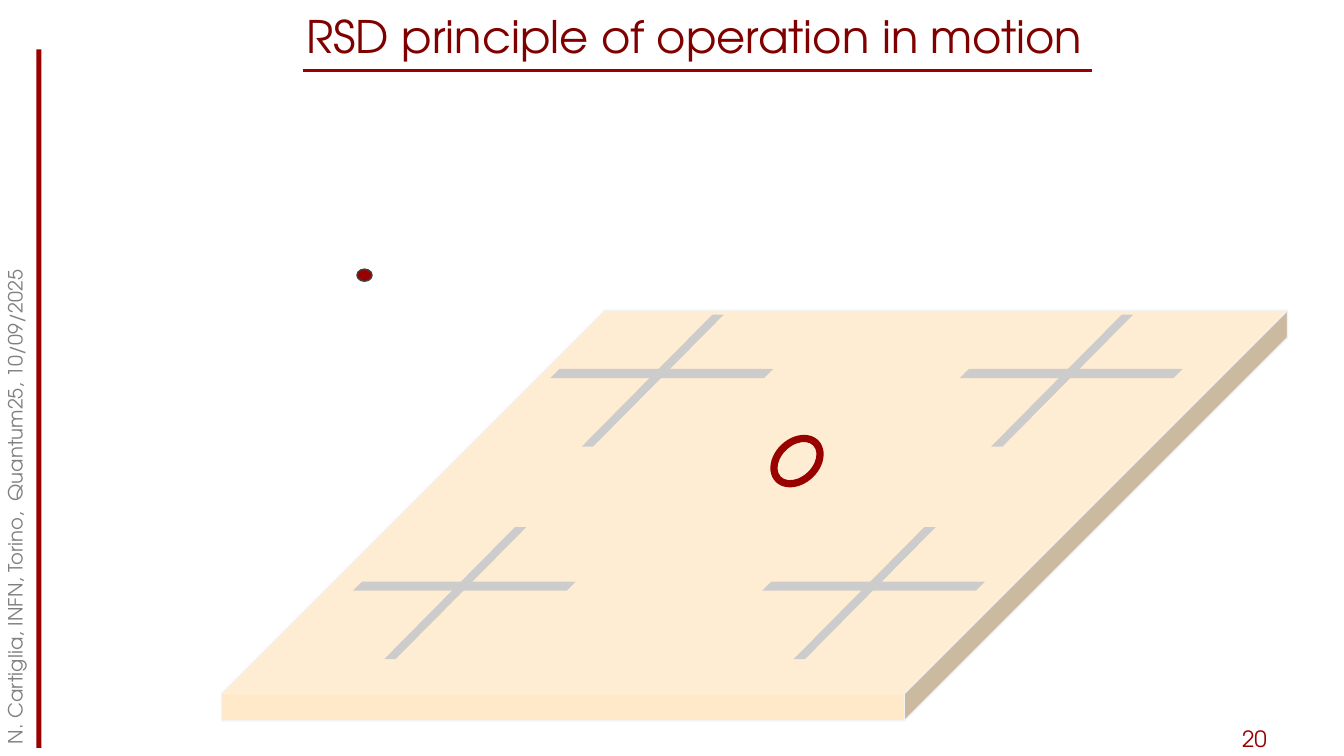
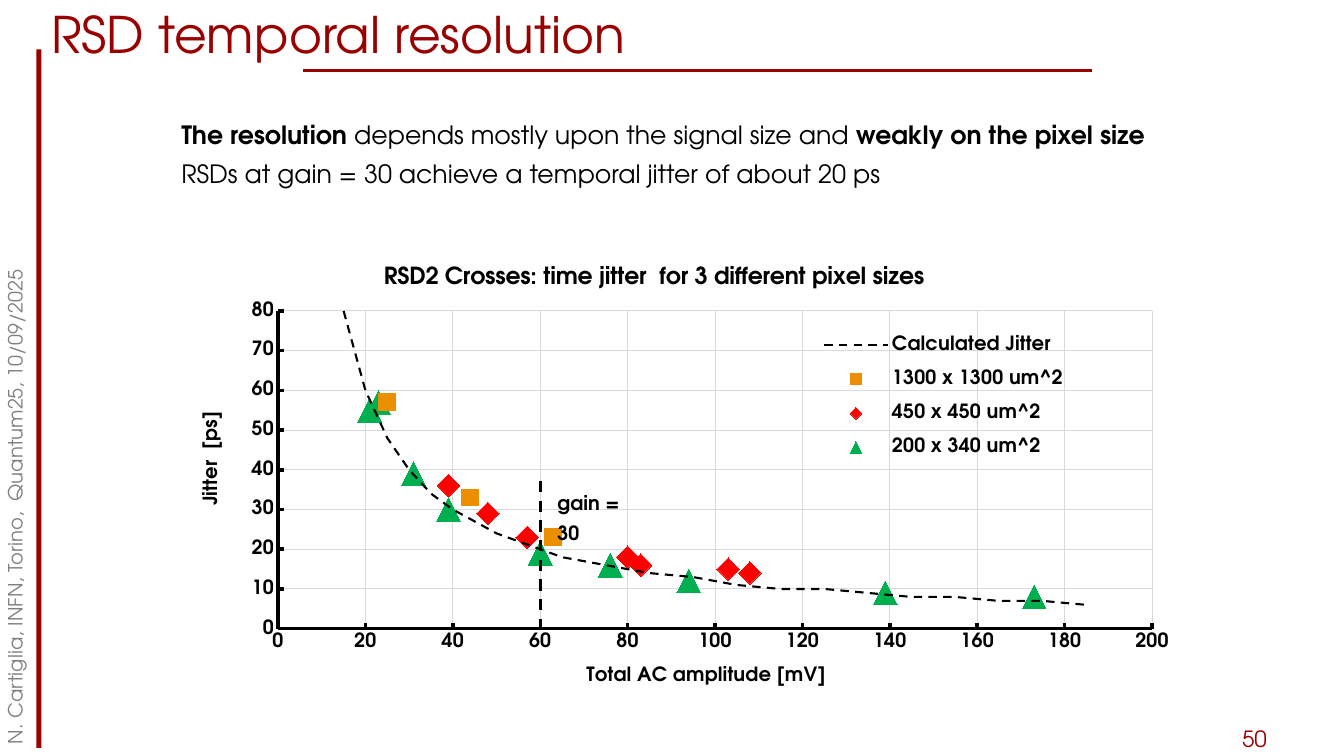
from pptx import Presentation
from pptx.chart.data import XyChartData
from pptx.dml.color import RGBColor
from pptx.enum.chart import XL_CHART_TYPE, XL_LEGEND_POSITION, XL_MARKER_STYLE, XL_TICK_MARK
from pptx.enum.dml import MSO_LINE
from pptx.enum.shapes import MSO_CONNECTOR, MSO_SHAPE
from pptx.enum.text import MSO_ANCHOR, PP_ALIGN
from pptx.oxml import parse_xml
from pptx.oxml.ns import nsdecls
from pptx.util import Pt

EMU_PER_PX = 9144  # 100 px to the inch
FONT = "TeX Gyre Adventor"

RED = RGBColor(0x99, 0x00, 0x00)
DARK_RED = RGBColor(0x80, 0x00, 0x00)
BLACK = RGBColor(0x00, 0x00, 0x00)
GRAY = RGBColor(0x80, 0x80, 0x80)
OUTLINE_GRAY = RGBColor(0x40, 0x40, 0x40)
GRID_GRAY = RGBColor(0xD9, 0xD9, 0xD9)
PAD_GRAY = RGBColor(0xCC, 0xCC, 0xCC)
SENSOR_EDGE = RGBColor(0xF2, 0xF2, 0xF2)
SENSOR_CREAM = RGBColor(0xFF, 0xE9, 0xC8)
ORANGE = RGBColor(0xEB, 0x8F, 0x00)
BRIGHT_RED = RGBColor(0xFF, 0x00, 0x00)
GREEN = RGBColor(0x00, 0xB0, 0x50)

RECTANGLE = MSO_SHAPE.RECTANGLE
OVAL = MSO_SHAPE.OVAL
DONUT = MSO_SHAPE.DONUT
CUBE = MSO_SHAPE.CUBE
PARALLELOGRAM = MSO_SHAPE.PARALLELOGRAM
STRAIGHT = MSO_CONNECTOR.STRAIGHT
DASH = MSO_LINE.DASH
TOP = MSO_ANCHOR.TOP
MIDDLE = MSO_ANCHOR.MIDDLE
LEFT = PP_ALIGN.LEFT
CENTER = PP_ALIGN.CENTER
TICK_INSIDE = XL_TICK_MARK.INSIDE
LEGEND_RIGHT = XL_LEGEND_POSITION.RIGHT
SCATTER = XL_CHART_TYPE.XY_SCATTER_SMOOTH_NO_MARKERS
SQUARE = XL_MARKER_STYLE.SQUARE
DIAMOND = XL_MARKER_STYLE.DIAMOND
TRIANGLE = XL_MARKER_STYLE.TRIANGLE

FOOTER = "N. Cartiglia, INFN, Torino,  Quantum25, 10/09/2025"
SENSOR_HEIGHT = 407
SENSOR_DEPTH = 380
CURVE_NAME = "Calculated Jitter"
CURVE_AMPLITUDES = [*range(5, 66, 5), *range(75, 186, 10)]
JITTER_TIMES_AMPLITUDE = 1200

# name, marker style, marker size, colour, (amplitude, jitter) points
PIXEL_SERIES = [
    ("1300 x 1300 um^2", SQUARE, 12, ORANGE, [(25, 57), (44, 33), (63, 23)]),
    ("450 x 450 um^2", DIAMOND, 16, BRIGHT_RED,
     [(39, 36), (48, 29), (57, 23), (80, 18), (83, 16), (103, 15), (108, 14)]),
    ("200 x 340 um^2", TRIANGLE, 17, GREEN,
     [(21, 55), (23, 57), (31, 39), (39, 30), (60, 19), (76, 16), (94, 12),
      (139, 9), (173, 8)]),
]


def px(*lengths):
    return [length * EMU_PER_PX for length in lengths]


def style_font(font, size, color, bold=False):
    font.name = FONT
    font.size = Pt(size)
    font.bold = bold
    font.color.rgb = color


def add_shape(slide, kind, box, fill, outline=None, adjustment=None, rotation=0):
    shape = slide.shapes.add_shape(kind, *px(*box))
    shape.shadow.inherit = False
    shape.fill.solid()
    shape.fill.fore_color.rgb = fill
    if outline is None:
        shape.line.fill.background()
    else:
        shape.line.color.rgb = outline
        shape.line.width = Pt(1)
    if adjustment is not None:
        shape.adjustments[0] = adjustment
    shape.rotation = rotation


def add_line(slide, start, end, color, dash=None):
    connector = slide.shapes.add_connector(STRAIGHT, *px(*start, *end))
    connector.line.color.rgb = color
    connector.line.width = Pt(2)
    if dash is not None:
        connector.line.dash_style = dash
    properties = connector.element.spPr
    properties.append(parse_xml(f"<a:effectLst {nsdecls('a')}/>"))


def add_text(slide, box, paragraphs, size, color, anchor=TOP, align=LEFT,
             line_spacing=1.0, rotation=0):
    """Add a text box; each paragraph is a list of (text, bold) runs."""
    text_box = slide.shapes.add_textbox(*px(*box))
    text_box.rotation = rotation
    text_frame = text_box.text_frame
    text_frame.word_wrap = True
    text_frame.vertical_anchor = anchor
    for index, runs in enumerate(paragraphs):
        paragraph = text_frame.add_paragraph() if index else text_frame.paragraphs[0]
        paragraph.alignment = align
        paragraph.line_spacing = line_spacing
        for text, bold in runs:
            run = paragraph.add_run()
            run.text = text
            style_font(run.font, size, color, bold)


def add_base_slide(presentation, title, number, title_corner, title_size, title_color,
                   title_align):
    slide = presentation.slides.add_slide(presentation.slide_layouts[6])
    add_shape(slide, RECTANGLE, (36, 49, 5, 693), RED)
    add_line(slide, (301, 70), (1083, 70), RED)
    add_text(slide, (1222, 715, 81, 35), [[(str(number), False)]], 16, RED, MIDDLE)
    add_text(slide, (-339, 373, 712, 38), [[(FOOTER, False)]], 14, GRAY, rotation=270)
    add_text(slide, (*title_corner, 1292, 70), [[(title, False)]], title_size,
             title_color, MIDDLE, title_align)
    return slide


def add_cross_pad(slide, left, top):
    add_shape(slide, PARALLELOGRAM, (left, top, 141, 131), PAD_GRAY, adjustment=0.99)
    add_shape(slide, PARALLELOGRAM, (left - 31, top + 54, 221, 9), PAD_GRAY, adjustment=1)


def set_layout(element, left, top, width=None, height=None, inner=False):
    """Place a chart part by fractions of the chart area."""
    for layout in element.xpath("./c:layout"):
        element.remove(layout)
    target = '<c:layoutTarget val="inner"/>' if inner else ""
    modes = '<c:xMode val="edge"/><c:yMode val="edge"/>'
    sizes = zip("xywh", (left, top, width, height))
    values = "".join(f'<c:{key} val="{value}"/>' for key, value in sizes
                     if value is not None)
    layout = parse_xml(f"<c:layout {nsdecls('c')}><c:manualLayout>"
                       f"{target}{modes}{values}</c:manualLayout></c:layout>")
    overlays = element.xpath("./c:overlay")
    if overlays:
        overlays[0].addprevious(layout)
    else:
        element.insert(0, layout)


def set_chart_title(title, text, size, left, top):
    title.text_frame.text = text
    style_font(title.text_frame.paragraphs[0].runs[0].font, size, BLACK, True)
    set_layout(title.element, left, top)


def style_axis(axis, maximum, step):
    axis.minimum_scale = 0
    axis.maximum_scale = maximum
    axis.major_unit = step
    axis.major_tick_mark = TICK_INSIDE
    axis.has_major_gridlines = True
    axis.major_gridlines.format.line.color.rgb = GRID_GRAY
    axis.major_gridlines.format.line.width = Pt(0.75)
    axis.format.line.color.rgb = BLACK
    axis.format.line.width = Pt(2.5)
    axis.tick_labels.number_format = "0"
    axis.tick_labels.number_format_is_linked = False
    style_font(axis.tick_labels.font, 14, BLACK, True)


def jitter_data():
    chart_data = XyChartData()
    curve = chart_data.add_series(CURVE_NAME)
    for amplitude in CURVE_AMPLITUDES:
        curve.add_data_point(amplitude, round(JITTER_TIMES_AMPLITUDE / amplitude))
    for name, _, _, _, points in PIXEL_SERIES:
        series = chart_data.add_series(name)
        for amplitude, jitter in points:
            series.add_data_point(amplitude, jitter)
    return chart_data


def style_series(plot):
    plot.vary_by_categories = False
    curve, *pixel_series = plot.series
    curve.smooth = True
    curve.format.line.color.rgb = BLACK
    curve.format.line.width = Pt(1.5)
    curve.format.line.dash_style = DASH
    for series, (_, style, size, color, _) in zip(pixel_series, PIXEL_SERIES):
        series.smooth = False
        series.format.line.fill.background()
        series.marker.style = style
        series.marker.size = size
        series.marker.format.fill.solid()
        series.marker.format.fill.fore_color.rgb = color
        series.marker.format.line.fill.background()


def add_jitter_chart(slide):
    chart = slide.shapes.add_chart(SCATTER, *px(175, 240, 1008, 457), jitter_data()).chart
    style_font(chart.font, 14, BLACK, True)
    style_series(chart.plots[0])
    style_axis(chart.category_axis, 200, 20)
    style_axis(chart.value_axis, 80, 10)
    set_layout(chart.element.xpath(".//c:plotArea")[0], 0.1, 0.15, 0.86, 0.69, inner=True)

    chart.has_title = True
    set_chart_title(chart.chart_title,
                    "RSD2 Crosses: time jitter  for 3 different pixel sizes", 16.8, 0.2, 0.04)
    set_chart_title(chart.category_axis.axis_title, "Total AC amplitude [mV]", 14, 0.4, 0.91)
    jitter_title = chart.value_axis.axis_title
    set_chart_title(jitter_title, "Jitter  [ps]", 14, 0.02, 0.36)
    body = jitter_title.element.xpath(".//a:bodyPr")[0]
    body.set("rot", "-5400000")
    body.set("vert", "horz")

    chart.has_legend = True
    chart.legend.position = LEGEND_RIGHT
    chart.legend.include_in_layout = True
    style_font(chart.legend.font, 14, BLACK, True)
    set_layout(chart.element.xpath(".//c:legend")[0], 0.62, 0.17, 0.27, 0.33)


def build_principle_slide(presentation):
    slide = add_base_slide(presentation, "RSD principle of operation in motion", 20,
                           (43, 0), 32, DARK_RED, CENTER)
    add_shape(slide, CUBE, (220, 308, 1057, SENSOR_HEIGHT), SENSOR_CREAM, SENSOR_EDGE,
              SENSOR_DEPTH / SENSOR_HEIGHT)
    for row in range(2):
        for column in range(2):
            add_cross_pad(slide, 577 + 406 * column - 196 * row, 312 + 211 * row)
    add_shape(slide, OVAL, (354, 267, 15, 12), RED, OUTLINE_GRAY)
    add_shape(slide, DONUT, (768, 428, 45, 59), RED, adjustment=0.16, rotation=46.6)


def build_resolution_slide(presentation):
    slide = add_base_slide(presentation, "RSD temporal resolution", 50, (41, -2), 36, RED,
                           LEFT)
    add_jitter_chart(slide)
    add_line(slide, (536, 477), (536, 618), BLACK, DASH)
    add_text(slide, (543, 475, 107, 70), [[("gain = 30", True)]], 14, BLACK,
             line_spacing=1.3)
    findings = [
        [("The resolution ", True),
         ("depends mostly upon the signal size and ", False),
         ("weakly on the pixel size", True)],
        [("RSDs at gain = 30 achieve a temporal jitter of about 20 ps", False)],
    ]
    add_text(slide, (170, 104, 1022, 85), findings, 18, BLACK, line_spacing=1.3)


def main():
    presentation = Presentation()
    presentation.slide_width, presentation.slide_height = px(1333, 750)
    build_principle_slide(presentation)
    build_resolution_slide(presentation)
    presentation.save("out.pptx")


if __name__ == "__main__":
    main()
